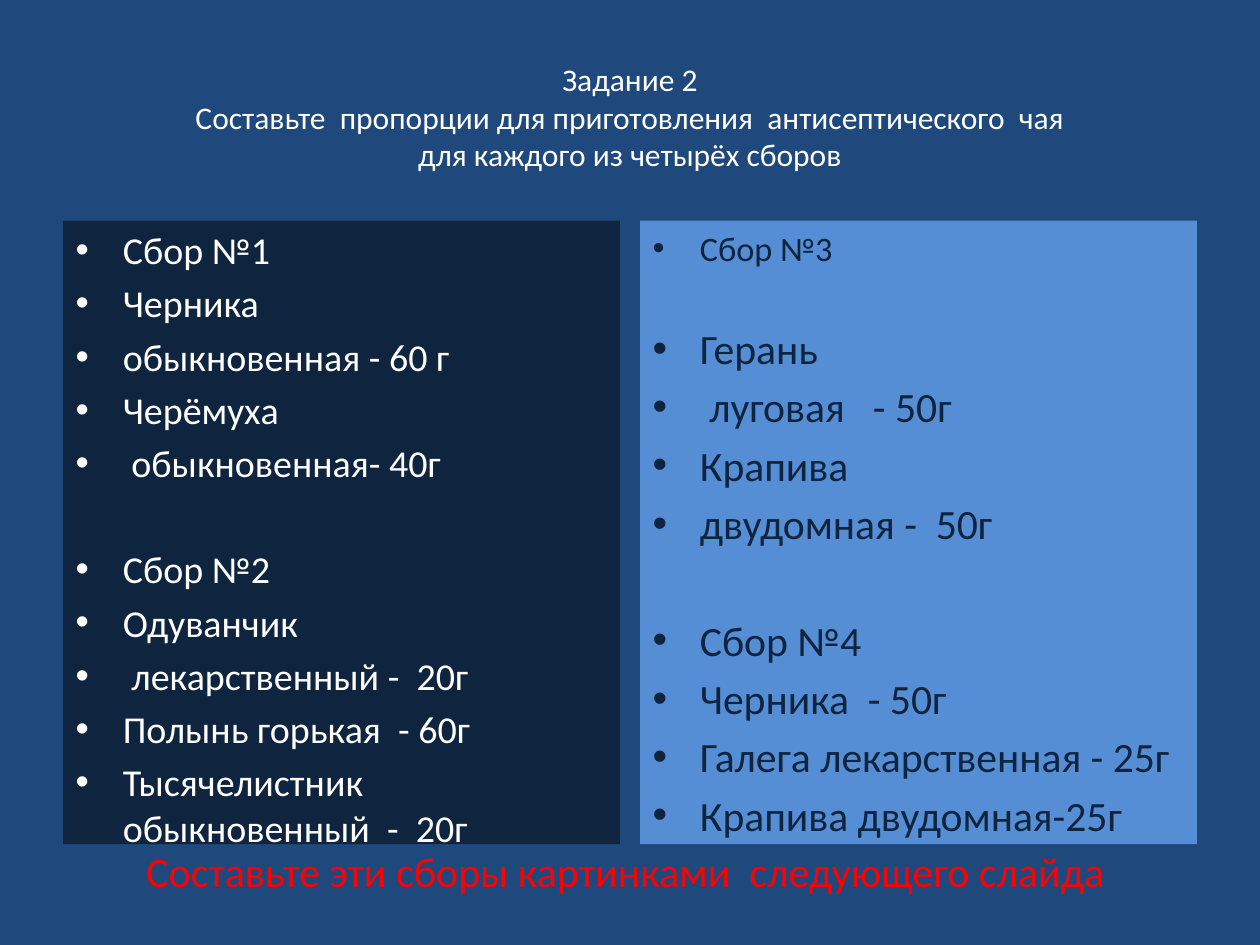
from pptx import Presentation
from pptx.dml.color import RGBColor
from pptx.enum import text
from pptx.util import Inches, Pt

THEME = {
    "font": "Calibri",
    "background": "1F497D",
    "navy": "0F243E",
    "blue": "558ED5",
    "white": "FFFFFF",
    "red": "FF0000",
    "title_size": 18,
    "caption_size": 24,
    "left_size": 21.7,
    "right_size": 23.8,
    "right_heading_size": 19.6,
    "group_gap": 1.6,  # multiple of the preceding line's size
}

TITLE = [
    "Задание 2",
    "Составьте  пропорции для приготовления  антисептического  чая",
    "для каждого из четырёх сборов",
]
CAPTION = "Составьте эти сборы картинками  следующего слайда"

# Each column holds groups of lines; a wider gap separates the groups.
COLUMNS = [
    {
        "fill": "navy",
        "color": "white",
        "groups": [
            ("left_size", ["Сбор №1", "Черника", "обыкновенная - 60 г",
                           "Черёмуха", " обыкновенная- 40г"]),
            ("left_size", ["Сбор №2", "Одуванчик", " лекарственный -  20г",
                           "Полынь горькая  - 60г",
                           "Тысячелистник обыкновенный  -  20г"]),
        ],
    },
    {
        "fill": "blue",
        "color": "navy",
        "groups": [
            ("right_heading_size", ["Сбор №3"]),
            ("right_size", ["Герань", " луговая   - 50г", "Крапива",
                            "двудомная -  50г"]),
            ("right_size", ["Сбор №4", "Черника  - 50г",
                            "Галега лекарственная - 25г",
                            "Крапива двудомная-25г"]),
        ],
    },
]

MARGIN, CONTENT_WIDTH = 0.5, 9
COLUMN_TOP, COLUMN_WIDTH, COLUMN_HEIGHT = 1.75, 4.42, 4.95


def theme_color(name):
    return RGBColor.from_string(THEME[name])


def place(shape, left, top, width, height):
    shape.left, shape.top = Inches(left), Inches(top)
    shape.width, shape.height = Inches(width), Inches(height)


def style(paragraph, size, color):
    paragraph.font.name = THEME["font"]
    paragraph.font.size = Pt(THEME[size])
    paragraph.font.color.rgb = theme_color(color)


def fill_column(shape, column):
    shape.fill.solid()
    shape.fill.fore_color.rgb = theme_color(column["fill"])
    frame = shape.text_frame
    frame.auto_size = text.MSO_AUTO_SIZE.NONE
    paragraph = frame.paragraphs[0]
    paragraph.space_before = Pt(0)
    previous_size = None
    for size, lines in column["groups"]:
        for index, line in enumerate(lines):
            if previous_size:
                paragraph = frame.add_paragraph()
                if index == 0:
                    gap = THEME["group_gap"] * THEME[previous_size]
                    paragraph.space_before = Pt(gap)
            paragraph.text = line
            style(paragraph, size, column["color"])
            previous_size = size


def main():
    presentation = Presentation()
    presentation.slide_width, presentation.slide_height = Inches(10), Inches(7.5)
    two_content = presentation.slide_layouts[3]
    slide = presentation.slides.add_slide(two_content)
    slide.background.fill.solid()
    slide.background.fill.fore_color.rgb = theme_color("background")

    title = slide.shapes.title
    place(title, MARGIN, 0.3, CONTENT_WIDTH, 1.25)
    title.text_frame.auto_size = text.MSO_AUTO_SIZE.NONE
    title.text_frame.text = "\v".join(TITLE)
    style(title.text_frame.paragraphs[0], "title_size", "white")

    column_step = CONTENT_WIDTH - COLUMN_WIDTH
    for index, column in enumerate(COLUMNS):
        body = slide.placeholders[index + 1]
        place(body, MARGIN + index * column_step, COLUMN_TOP,
              COLUMN_WIDTH, COLUMN_HEIGHT)
        fill_column(body, column)

    caption = slide.shapes.add_textbox(
        Inches(0.75), Inches(6.66), Inches(8.43), Inches(0.5))
    caption.text_frame.word_wrap = True
    paragraph = caption.text_frame.paragraphs[0]
    paragraph.text = CAPTION
    paragraph.alignment = text.PP_ALIGN.CENTER
    style(paragraph, "caption_size", "red")

    presentation.save("out.pptx")


if __name__ == "__main__":
    main()
